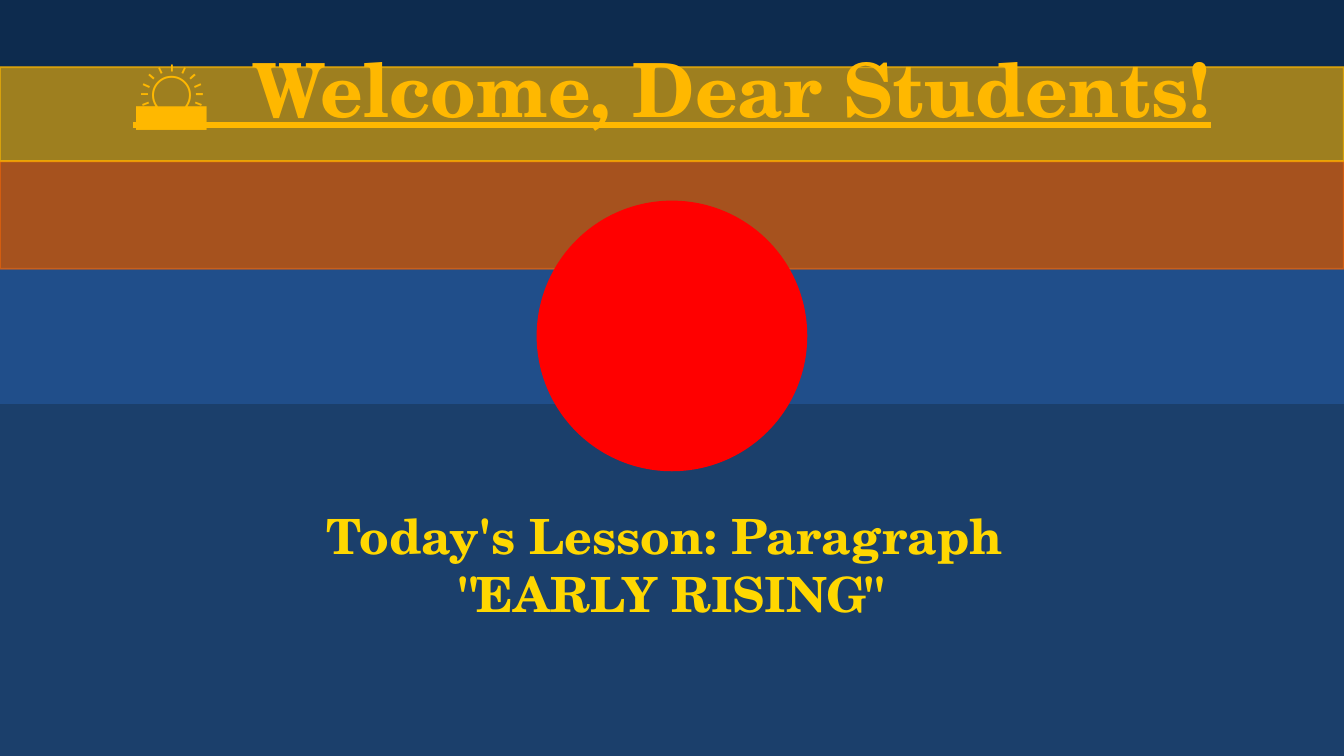
from lxml.etree import SubElement
from pptx import Presentation
from pptx.dml.color import RGBColor
from pptx.enum.shapes import MSO_SHAPE as Shape
from pptx.enum.text import MSO_ANCHOR as Anchor, PP_ALIGN as Align
from pptx.oxml.ns import qn
from pptx.util import Pt

PX = 4572
WIDTH, HEIGHT = 2000, 1125
NIGHT = RGBColor(0x0D, 0x2B, 0x4E)
GROUND = RGBColor(0x1B, 0x3F, 0x6B)
SKY = RGBColor(0x20, 0x4E, 0x8A)
ORANGE = RGBColor(0xE8, 0x63, 0x0A)
AMBER = RGBColor(0xFF, 0xB8, 0x00)
RED = RGBColor(0xFF, 0x00, 0x00)
GOLD = RGBColor(0xFF, 0xD7, 0x00)
FONT = "TeX Gyre Schola"


def add_filled(slide, preset, box, color, opacity=100):
    shape = slide.shapes.add_shape(preset, *(value * PX for value in box))
    shape.shadow.inherit = False
    shape.line.width = Pt(1)
    for fill in (shape.fill, shape.line.fill):
        fill.solid()
        fill.fore_color.rgb = color
    if opacity < 100:
        for color_element in shape._element.spPr.iter(qn("a:srgbClr")):
            SubElement(color_element, qn("a:alpha"), val=str(opacity * 1000))


def add_text(slide, box, lines, size, color, underline=None):
    frame = slide.shapes.add_textbox(*(value * PX for value in box)).text_frame
    frame.word_wrap = True
    frame.vertical_anchor = Anchor.MIDDLE
    for index, line in enumerate(lines):
        paragraph = frame.add_paragraph() if index else frame.paragraphs[0]
        paragraph.alignment = Align.CENTER
        run = paragraph.add_run()
        run.text = line
        run.font.name = FONT
        run.font.size = Pt(size)
        run.font.bold = True
        run.font.underline = underline
        run.font.color.rgb = color


presentation = Presentation()
presentation.slide_width = WIDTH * PX
presentation.slide_height = HEIGHT * PX
slide = presentation.slides.add_slide(presentation.slide_layouts[6])
slide.background.fill.solid()
slide.background.fill.fore_color.rgb = NIGHT

bands = [
    (560, 565, GROUND, 100),
    (400, 200, SKY, 100),
    (240, 160, ORANGE, 70),
    (100, 140, AMBER, 60),
]
for top, height, color, opacity in bands:
    add_filled(slide, Shape.RECTANGLE, (0, top, WIDTH, height), color, opacity)

add_filled(slide, Shape.OVAL, (800, 300, 400, 400), RED)

add_text(slide, (60, 20, 1880, 220), ["🌅  Welcome, Dear Students!"], 40, AMBER, True)
add_text(slide, (200, 700, 1600, 280),
         ["Today's Lesson: Paragraph ", '"EARLY RISING"'], 26, GOLD)

presentation.save("out.pptx")
